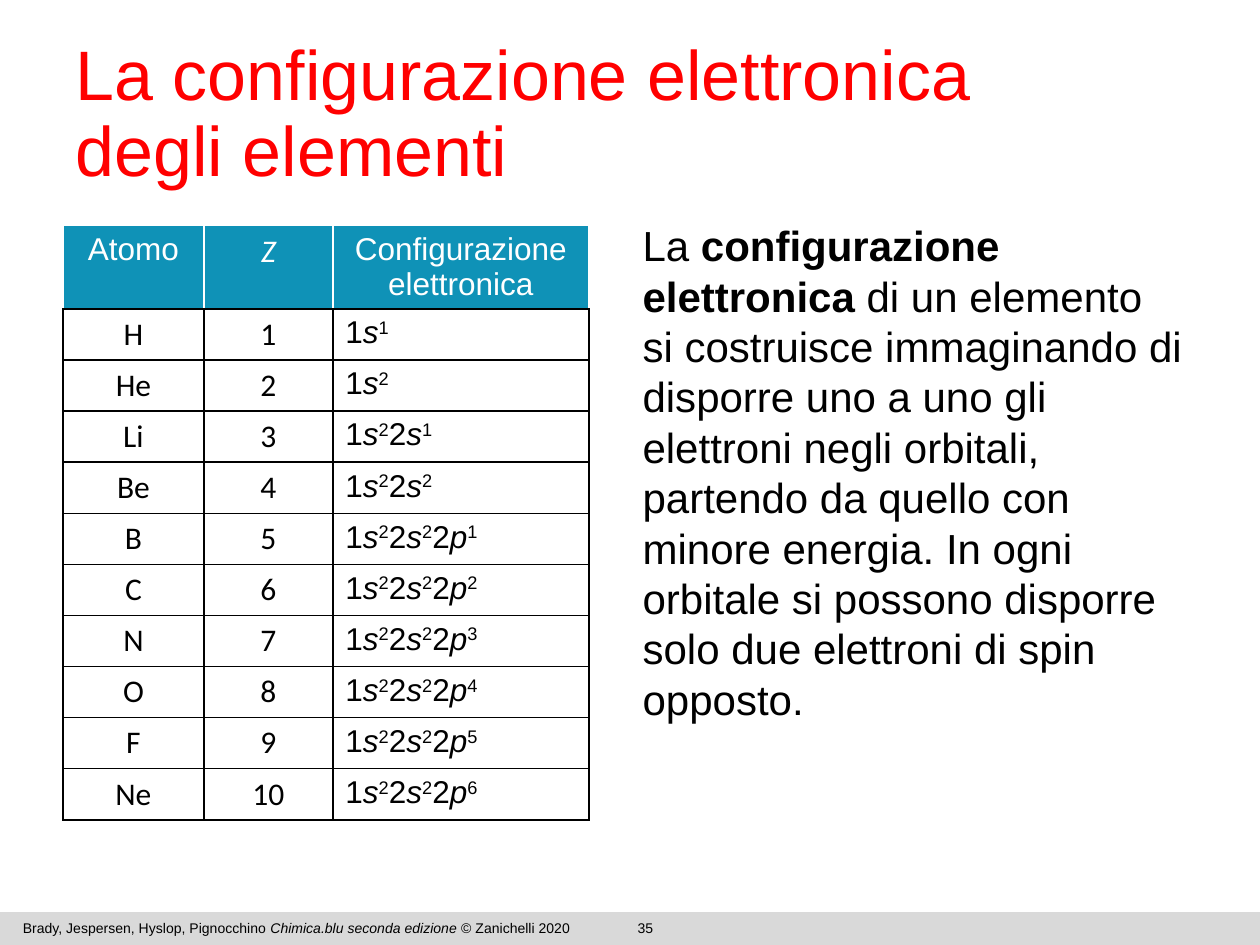
from typing import NamedTuple

from lxml import etree
from pptx import Presentation
from pptx.dml.color import RGBColor
from pptx.enum.shapes import MSO_SHAPE
from pptx.enum.text import MSO_ANCHOR, MSO_AUTO_SIZE, PP_ALIGN
from pptx.oxml.ns import qn
from pptx.util import Cm, Pt

LEFT, CENTER = PP_ALIGN.LEFT, PP_ALIGN.CENTER
TOP, MIDDLE = MSO_ANCHOR.TOP, MSO_ANCHOR.MIDDLE
FIXED = MSO_AUTO_SIZE.NONE
RECT = MSO_SHAPE.RECTANGLE
BLACK, WHITE, RED, TEAL, GRAY = "000000", "FFFFFF", "FF0000", "0F92B7", "D9D9D9"


class Box(NamedTuple):
    left: float
    top: float
    width: float
    height: float

    def lengths(self):
        return [Cm(n) for n in self]


class Run(NamedTuple):
    text: str
    bold: bool = False
    italic: bool = False
    raised: bool = False


class Shell(NamedTuple):
    level: str
    kind: str
    room: int


SHELLS = [Shell("1", "s", 2), Shell("2", "s", 2), Shell("2", "p", 6)]
ATOMS = ["H", "He", "Li", "Be", "B", "C", "N", "O", "F", "Ne"]
HEADS = [Run("Atomo"), Run("Z", italic=True), Run("Configurazione elettronica")]
WIDTHS = [2.84, 2.6, 5.16]
HEAD_HIGH, ROW_HIGH = 1.67, 1.03


def color(code: str) -> RGBColor:
    return RGBColor.from_string(code)


def write(para, runs: list[Run], size: float, ink: str = BLACK,
          face: str = "Arial", align=LEFT) -> None:
    para.alignment = align
    font = para.font
    font.size, font.name = Pt(size), face
    font.color.rgb = color(ink)
    for part in runs:
        run = para.add_run()
        run.text = part.text
        if part.bold:
            run.font.bold = True
        if part.italic:
            run.font.italic = True
        if part.raised:
            run.font._element.set("baseline", "30000")


def place(shape, box: Box, anchor):
    """Move a text shape, fix its frame and return its first paragraph."""
    shape.left, shape.top, shape.width, shape.height = box.lengths()
    frame = shape.text_frame
    frame.word_wrap = True
    frame.auto_size = FIXED
    frame.vertical_anchor = anchor
    return frame.paragraphs[0]


def label(slide, box: Box, runs: list[Run], align=LEFT) -> None:
    shape = slide.shapes.add_textbox(*box.lengths())
    write(place(shape, box, TOP), runs, 8, align=align)


def fill_shells(count: int) -> list[Run]:
    """Give the electron configuration of an atom with count electrons."""
    runs = []
    for shell in SHELLS:
        used = min(count, shell.room)
        if used:
            runs += [Run(shell.level), Run(shell.kind, italic=True),
                     Run(str(used), raised=True)]
        count -= used
    return runs


def edge(cell, side: str, code: str) -> None:
    line = etree.SubElement(cell._tc.get_or_add_tcPr(), qn(f"a:ln{side}"), w=str(Pt(1)))
    fill = etree.SubElement(line, qn("a:solidFill"))
    etree.SubElement(fill, qn("a:srgbClr"), val=code)


def style(cell, back: str, edges: str) -> None:
    for side in "LRT":
        edge(cell, side, edges)
    edge(cell, "B", BLACK)
    cell.fill.solid()
    cell.fill.fore_color.rgb = color(back)


def draw_table(slide) -> None:
    box = Box(1.27, 4.55, sum(WIDTHS), HEAD_HIGH + ROW_HIGH * len(ATOMS))
    table = slide.shapes.add_table(len(ATOMS) + 1, len(WIDTHS), *box.lengths()).table
    for col, width in zip(table.columns, WIDTHS):
        col.width = Cm(width)
    for index, row in enumerate(table.rows):
        row.height = Cm(ROW_HIGH if index else HEAD_HIGH)

    for col, head in enumerate(HEADS):
        cell = table.cell(0, col)
        style(cell, TEAL, WHITE)
        face = "Calibri" if head.italic else "Arial"
        write(cell.text_frame.paragraphs[0], [head], 18, WHITE, face, CENTER)

    for number, atom in enumerate(ATOMS, 1):
        row = [[Run(atom)], [Run(str(number))], fill_shells(number)]
        for col, runs in enumerate(row):
            cell = table.cell(number, col)
            style(cell, WHITE, BLACK)
            face, align = ("Arial", LEFT) if col == 2 else ("Calibri", CENTER)
            write(cell.text_frame.paragraphs[0], runs, 18, face=face, align=align)


def main() -> None:
    deck = Presentation()
    deck.slide_width, deck.slide_height = Cm(25.4), Cm(19.05)
    slide = deck.slides.add_slide(deck.slide_layouts[1])
    title, body = slide.placeholders

    bar = slide.shapes.add_shape(RECT, *Box(0, 18.39, 25.4, 0.66).lengths())
    bar.shadow.inherit = False
    bar.fill.solid()
    bar.fill.fore_color.rgb = color(GRAY)
    bar.line.fill.background()
    label(slide, Box(10.37, 18.41, 5.28, 0.43), [Run("35")], CENTER)
    label(slide, Box(0.21, 18.41, 14.27, 0.64), [
        Run("Brady, Jespersen, Hyslop, Pignocchino "),
        Run("Chimica.blu seconda edizione ", italic=True),
        Run("© Zanichelli 2020")])

    para = place(title, Box(1.27, 1.07, 22.83, 2.54), MIDDLE)
    para.line_spacing = 0.9
    write(para, [Run("La configurazione elettronica")], 40, RED)
    para.add_line_break()
    para.add_run().text = "degli elementi"

    para = place(body, Box(12.7, 4.3, 11.4, 11.43), TOP)
    props = para._p.get_or_add_pPr()
    props.set("marL", "0")
    props.set("indent", "0")
    etree.SubElement(props, qn("a:buNone"))
    para.space_before, para.space_after = Pt(0), Pt(15)
    write(para, [
        Run("La "),
        Run("configurazione elettronica ", bold=True),
        Run("di un elemento si costruisce immaginando di disporre uno a uno "
            "gli elettroni negli orbitali, partendo da quello con minore energia. "
            "In ogni orbitale si possono disporre solo due elettroni di spin opposto.")],
        24)

    draw_table(slide)
    deck.save("out.pptx")


if __name__ == "__main__":
    main()
